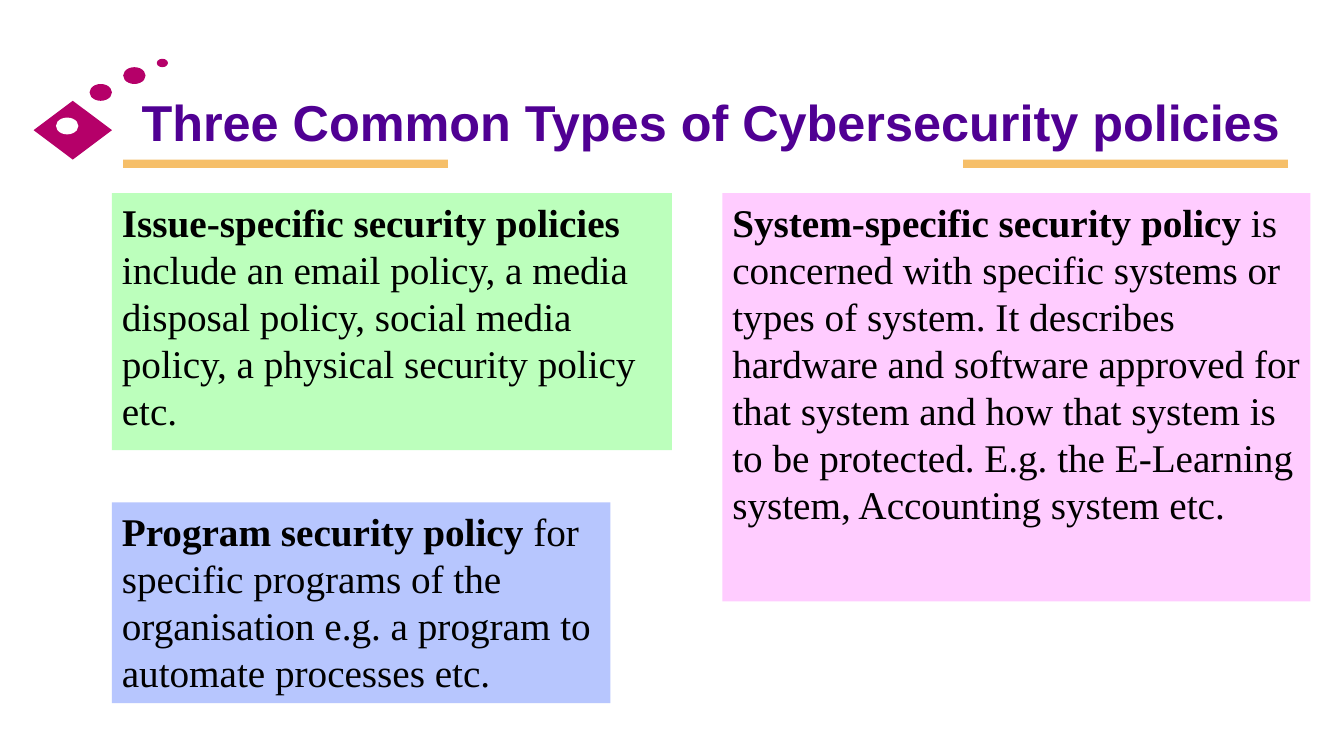
from pptx import Presentation
from pptx.dml.color import RGBColor
from pptx.enum.shapes import MSO_SHAPE
from pptx.enum.text import MSO_ANCHOR, PP_ALIGN
from pptx.util import Inches, Pt

# The slide is a grid of 120 columns and 90 rows
WIDTH, HEIGHT = Inches(13.33), Inches(7.5)
COLUMN, ROW = WIDTH / 120, HEIGHT / 90

COLORS = {
    "title": "500093",
    "text": "000000",
    "ornament": "B50069",
    "hole": "FFFFFF",
    "bar": "F6BF69",
    "issue": "BCFFBC",
    "system": "FFCCFF",
    "program": "B7C6FE",
}

# Ornament dots: color, column, row, columns wide, rows high
DOTS = [
    ("hole", 5, 14, 2, 2),
    ("ornament", 8, 10, 2, 2),
    ("ornament", 11, 8, 2, 2),
    ("ornament", 14, 7, 1, 1),
]

# Policy cards: color, grid area, bold lead, description
POLICIES = [
    ("issue", (10, 23, 50, 30.6), "Issue-specific security policies ",
     "include an email policy, a media disposal policy, social media policy, "
     "a physical security policy etc."),
    ("system", (64.5, 23, 52.5, 48.6), "System-specific security policy ",
     "is concerned with specific systems or types of system. It describes "
     "hardware and software approved for that system and how that system is "
     "to be protected. E.g. the E-Learning system, Accounting system etc."),
    ("program", (10, 59.8, 44.5, 23.9), "Program security policy ",
     "for specific programs of the organisation e.g. a program to automate "
     "processes etc."),
]


def grid_area(column, row, columns, rows):
    return (round(column * COLUMN), round(row * ROW),
            round(columns * COLUMN), round(rows * ROW))


def add_filled_shape(slide, kind, color, area):
    shape = slide.shapes.add_shape(kind, *grid_area(*area))
    shape.shadow.inherit = False
    shape.fill.solid()
    shape.fill.fore_color.rgb = RGBColor.from_string(COLORS[color])
    shape.line.fill.background()
    return shape


def add_run(paragraph, text, font_name, size, color, bold):
    run = paragraph.add_run()
    run.text = text
    run.font.name = font_name
    run.font.size = Pt(size)
    run.font.bold = bold
    run.font.color.rgb = RGBColor.from_string(COLORS[color])


def add_title(slide, text, area):
    text_frame = slide.shapes.add_textbox(*grid_area(*area)).text_frame
    text_frame.word_wrap = True
    text_frame.vertical_anchor = MSO_ANCHOR.MIDDLE
    paragraph = text_frame.paragraphs[0]
    paragraph.alignment = PP_ALIGN.CENTER
    add_run(paragraph, text, "Arial", 36, "title", True)


def add_policy(slide, color, area, lead, description):
    card = add_filled_shape(slide, MSO_SHAPE.RECTANGLE, color, area)
    text_frame = card.text_frame
    text_frame.word_wrap = True
    text_frame.vertical_anchor = MSO_ANCHOR.TOP
    paragraph = text_frame.paragraphs[0]
    paragraph.alignment = PP_ALIGN.LEFT
    for text, bold in ((lead, True), (description, False)):
        add_run(paragraph, text, "Times New Roman", 28, "text", bold)


def main():
    presentation = Presentation()
    presentation.slide_width, presentation.slide_height = WIDTH, HEIGHT
    slide = presentation.slides.add_slide(presentation.slide_layouts[6])

    # Bars under the title
    for column in (11, 86):
        add_filled_shape(slide, MSO_SHAPE.RECTANGLE, "bar", (column, 19, 29, 1))

    # Diamond with its trail of dots
    add_filled_shape(slide, MSO_SHAPE.DIAMOND, "ornament", (3, 12, 7, 7))
    for color, *area in DOTS:
        add_filled_shape(slide, MSO_SHAPE.OVAL, color, area)

    # Title and policy cards
    add_title(slide, "Three Common Types of Cybersecurity policies", (10, 8, 107, 13))
    for policy in POLICIES:
        add_policy(slide, *policy)

    presentation.save("out.pptx")


if __name__ == "__main__":
    main()
